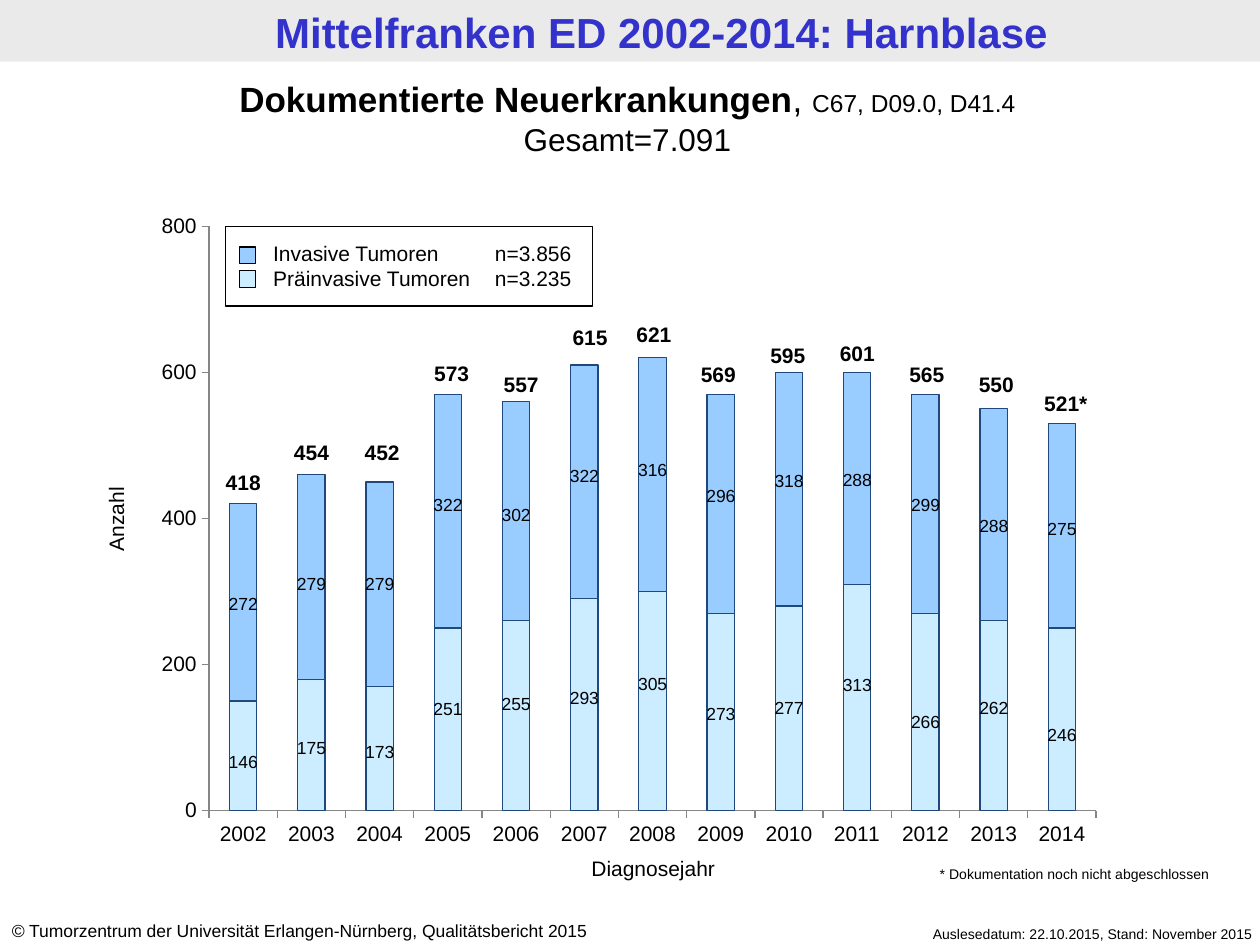
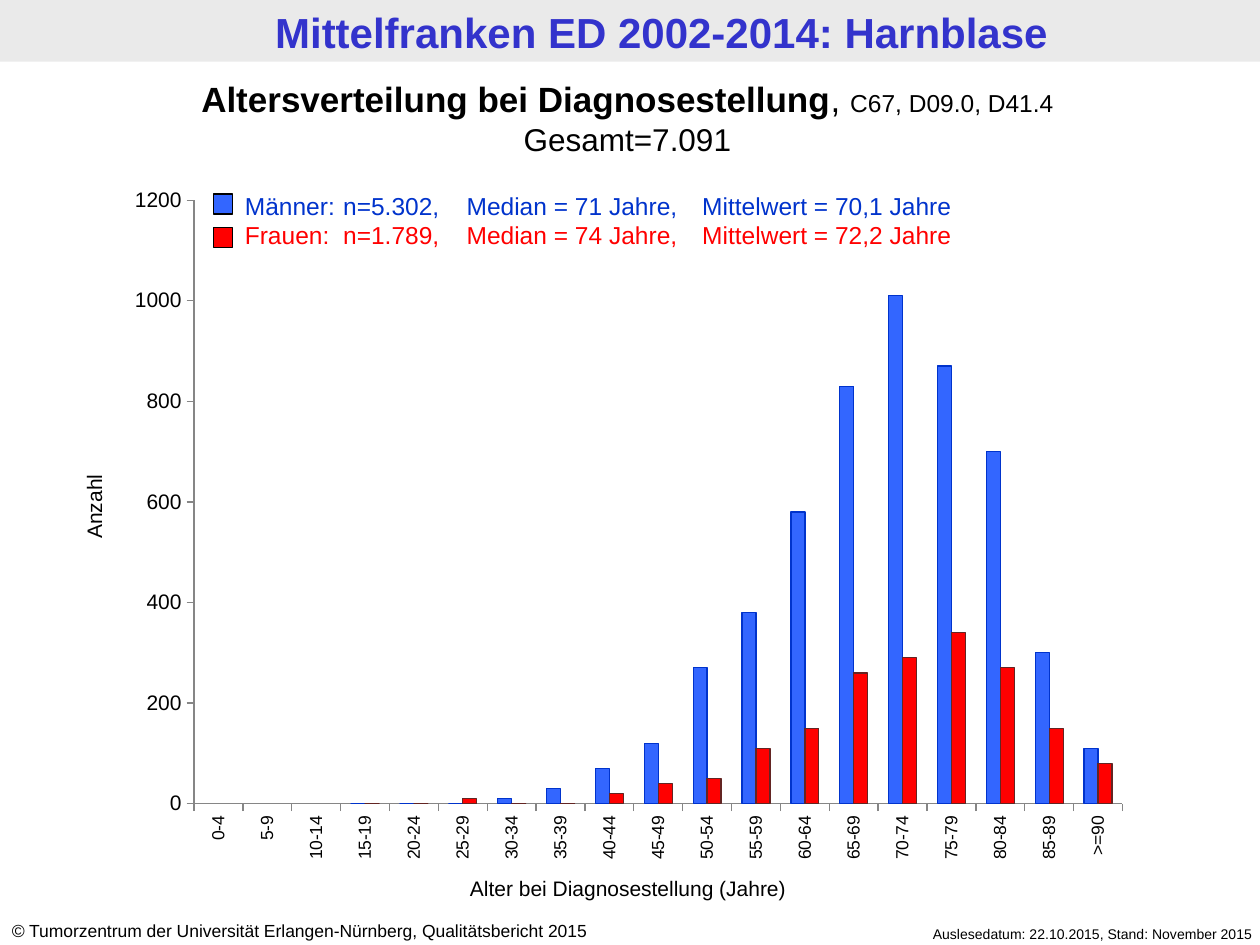
from dataclasses import dataclass
from typing import Optional

from pptx import Presentation
from pptx.chart.data import CategoryChartData
from pptx.dml.color import RGBColor
from pptx.enum.chart import XL_CHART_TYPE, XL_TICK_MARK
from pptx.enum.shapes import MSO_SHAPE
from pptx.enum.text import MSO_ANCHOR, MSO_AUTO_SIZE, PP_ALIGN
from pptx.oxml import parse_xml
from pptx.oxml.ns import nsdecls, qn
from pptx.util import Emu, Inches, Pt

LEFT, CENTER, RIGHT = PP_ALIGN.LEFT, PP_ALIGN.CENTER, PP_ALIGN.RIGHT
STACKED, CLUSTERED = XL_CHART_TYPE.COLUMN_STACKED, XL_CHART_TYPE.COLUMN_CLUSTERED
RECTANGLE = MSO_SHAPE.RECTANGLE
TICK_OUT = XL_TICK_MARK.OUTSIDE

# Grid: 100 columns by 75 rows of square cells
SLIDE_WIDTH, SLIDE_HEIGHT = Inches(10), Inches(7.5)
COLUMNS = 100
CELL = SLIDE_WIDTH / COLUMNS

FONT = "Arial"
BLACK, GREY, BAND, TITLE_BLUE = "000000", "868686", "EAEAEA", "3333CC"
INVASIVE, PREINVASIVE, BAR_EDGE = "99CCFF", "CCECFF", "1F497D"
MEN, MEN_EDGE, WOMEN, WOMEN_EDGE = "3366FF", "0033CC", "FF0000", "632523"


@dataclass(frozen=True)
class Area:
    """Position and size in grid cells."""
    left: float
    top: float
    width: float
    height: float

    def emu(self) -> tuple:
        return tuple(cells(v) for v in (self.left, self.top, self.width, self.height))


@dataclass(frozen=True)
class Span:
    text: str
    size: float
    bold: bool = False
    italic: bool = False


@dataclass(frozen=True)
class Style:
    size: float = 12
    color: str = BLACK
    bold: bool = False
    align: PP_ALIGN = LEFT
    tabs: tuple = ()


@dataclass(frozen=True)
class Series:
    name: str
    values: tuple
    fill: str
    edge: str


@dataclass(frozen=True)
class ColumnChart:
    kind: XL_CHART_TYPE
    area: Area
    plot: Area
    categories: tuple
    series: tuple
    maximum: int
    overlap: int
    category_size: float = 12
    upright_labels: bool = False


@dataclass(frozen=True)
class YearBar:
    """Counts of one year, the rows of their labels, and a shift of the total."""
    year: str
    invasive: int
    preinvasive: int
    total_row: float
    invasive_row: float
    preinvasive_row: float
    shift: float = 0
    mark: str = ""


def cells(count: float) -> Emu:
    return Emu(round(count * CELL))


def color(value: str) -> RGBColor:
    return RGBColor.from_string(value)


# Text
def write(frame, lines, style: Style) -> None:
    """Each line is a string or a tuple of spans."""
    for index, line in enumerate(lines):
        para = frame.paragraphs[0] if index == 0 else frame.add_paragraph()
        para.alignment = style.align
        if style.tabs:
            stops = "".join(f'<a:tab pos="{cells(t)}" algn="l"/>' for t in style.tabs)
            para._p.get_or_add_pPr().append(
                parse_xml(f'<a:tabLst {nsdecls("a")}>{stops}</a:tabLst>'))
        para.font.name = FONT
        para.font.color.rgb = color(style.color)
        if isinstance(line, str):
            para.font.size, para.font.bold = Pt(style.size), style.bold
            para.add_run().text = line
            continue
        for span in line:
            run = para.add_run()
            run.text = span.text
            run.font.size = Pt(span.size)
            run.font.bold, run.font.italic = span.bold, span.italic


def add_text(page, area: Area, lines, style: Style = Style(),
             rotation: float = 0, side_inset: float = 1):
    box = page.shapes.add_textbox(*area.emu())
    box.rotation = rotation
    frame = box.text_frame
    frame.word_wrap = True
    frame.margin_left = frame.margin_right = cells(side_inset)
    write(frame, lines, style)
    return box


def add_rectangle(page, area: Area, fill: Optional[str], edge: Optional[str] = BLACK) -> None:
    shape = page.shapes.add_shape(RECTANGLE, *area.emu())
    shape.shadow.inherit = False
    if fill:
        shape.fill.solid()
        shape.fill.fore_color.rgb = color(fill)
    else:
        shape.fill.background()
    if edge:
        shape.line.color.rgb = color(edge)
        shape.line.width = Pt(0.75)
    else:
        shape.line.fill.background()


def add_axis_title(page, area: Area, text: str, rotation: float = 0) -> None:
    add_text(page, area, [text], Style(align=CENTER), rotation)


# Parts shared by both slides
def add_page(deck, heading: str):
    page = deck.slides.add_slide(deck.slide_layouts.get_by_name("Title Only"))
    add_rectangle(page, Area(0, 0, COLUMNS, 4.9), BAND, None)
    band = add_text(page, Area(2.5, 0.15, 100, 4.9),
                    ["Mittelfranken ED 2002-2014: Harnblase"],
                    Style(24, TITLE_BLUE, True, CENTER))
    band.text_frame.margin_top = band.text_frame.margin_bottom = cells(0.4)
    add_text(page, Area(66.5, 72.95, 33.9, 2.4),
             ["Auslesedatum: 22.10.2015, Stand: November 2015"], Style(8, align=RIGHT))
    add_text(page, Area(-0.05, 72.55, 52.4, 2.7), [(
        Span("©", 10, italic=True),
        Span(" Tumorzentrum der Universität Erlangen-Nürnberg, Qualitätsbericht 2015", 10))])

    title = page.shapes.title
    title.left, title.top, title.width, title.height = Area(-0.4, 5.65, 100.4, 7.4).emu()
    frame = title.text_frame
    frame.auto_size = MSO_AUTO_SIZE.NONE
    frame.vertical_anchor = MSO_ANCHOR.TOP
    write(frame, [
        (Span(heading, 20, bold=True), Span(", ", 20), Span("C67, D09.0, D41.4", 14)),
        (Span("Gesamt=7.091", 18),)], Style(align=CENTER))
    return page


# Charts
def place_plot(chart, area: Area, plot: Area) -> None:
    shares = {"x": (plot.left - area.left) / area.width,
              "y": (plot.top - area.top) / area.height,
              "w": plot.width / area.width, "h": plot.height / area.height}
    modes = "".join(f'<c:{key}Mode val="edge"/>' for key in "xy")
    sizes = "".join(f'<c:{key} val="{share:.4f}"/>' for key, share in shares.items())
    plot_area = chart._chartSpace.chart.plotArea
    for old in plot_area.findall(qn("c:layout")):
        plot_area.remove(old)
    plot_area.insert(0, parse_xml(
        f'<c:layout {nsdecls("c")}><c:manualLayout><c:layoutTarget val="inner"/>'
        f'{modes}{sizes}</c:manualLayout></c:layout>'))


def add_column_chart(page, design: ColumnChart) -> None:
    data = CategoryChartData()
    data.categories = design.categories
    for series in design.series:
        data.add_series(series.name, series.values)
    chart = page.shapes.add_chart(design.kind, *design.area.emu(), data).chart
    chart.has_title = chart.has_legend = False
    chart.font.name, chart.font.size = FONT, Pt(12)
    chart.font.color.rgb = color(BLACK)
    place_plot(chart, design.area, design.plot)

    plot = chart.plots[0]
    plot.gap_width, plot.overlap, plot.vary_by_categories = 150, design.overlap, False
    for drawn, series in zip(plot.series, design.series):
        drawn.format.fill.solid()
        drawn.format.fill.fore_color.rgb = color(series.fill)
        drawn.format.line.color.rgb = color(series.edge)
        drawn.format.line.width = Pt(0.75)

    values, categories = chart.value_axis, chart.category_axis
    for axis, size in ((values, 12), (categories, design.category_size)):
        axis.has_major_gridlines = False
        axis.major_tick_mark = TICK_OUT
        axis.format.line.color.rgb = color(GREY)
        axis.tick_labels.font.size = Pt(size)
        axis.tick_labels.font.name = FONT
    values.minimum_scale, values.maximum_scale, values.major_unit = 0, design.maximum, 200
    if design.upright_labels:
        body = categories._element.find(qn("c:txPr")).find(qn("a:bodyPr"))
        body.set("rot", "-5400000")
        body.set("vert", "horz")


# Slide 1: new cases per year
YEAR_BARS = (
    YearBar("2002", 272, 146, 36.8, 46.6, 59.1),
    YearBar("2003", 279, 175, 34.4, 45, 58),
    YearBar("2004", 279, 173, 34.4, 45, 58.3, 0.2),
    YearBar("2005", 322, 251, 28.1, 38.7, 54.9, 0.3),
    YearBar("2006", 302, 255, 29, 39.5, 54.5, 0.4),
    YearBar("2007", 322, 293, 25.3, 36.4, 54, 0.45),
    YearBar("2008", 316, 305, 25, 35.9, 52.9, 0.1),
    YearBar("2009", 296, 273, 28.2, 38, 55.3, -0.2),
    YearBar("2010", 318, 277, 26.7, 36.8, 54.8, -0.1),
    YearBar("2011", 288, 313, 26.5, 36.7, 53),
    YearBar("2012", 299, 266, 28.2, 38.7, 55.9, 0.1),
    YearBar("2013", 288, 262, 29, 40.4, 54.8, 0.2),
    YearBar("2014", 275, 246, 30.5, 40.6, 57, 0.3, "*"),
)


def add_new_cases(deck) -> None:
    page = add_page(deck, "Dokumentierte Neuerkrankungen")
    plot = Area(16.6, 17.95, 70.4, 46.4)
    # Bars are drawn to the nearest ten; the labels hold the exact counts
    add_column_chart(page, ColumnChart(
        STACKED, Area(11.5, 16.4, 77.1, 51.4), plot,
        tuple(bar.year for bar in YEAR_BARS),
        (Series("Präinvasive Tumoren", tuple(round(bar.preinvasive, -1) for bar in YEAR_BARS),
                PREINVASIVE, BAR_EDGE),
         Series("Invasive Tumoren", tuple(round(bar.invasive, -1) for bar in YEAR_BARS),
                INVASIVE, BAR_EDGE)),
        maximum=800, overlap=100))
    add_axis_title(page, Area(40.6, 67.4, 22.5, 3), "Diagnosejahr")
    add_axis_title(page, Area(3.1, 39.7, 12.2, 3), "Anzahl", 270)

    # Legend
    add_rectangle(page, Area(17.9, 18, 29.1, 6.3), None)
    add_text(page, Area(20.7, 18.6, 26.4, 7.1),
             ["Invasive Tumoren\tn=3.856", "Präinvasive Tumoren\tn=3.235"],
             Style(tabs=(17.6,)))
    for row, fill in enumerate((INVASIVE, PREINVASIVE)):
        add_rectangle(page, Area(19, 19.6 + 1.9 * row, 1.3, 1.3), fill)

    # Labels of totals and parts
    slot = plot.width / len(YEAR_BARS)
    total_style, part_style = Style(12, bold=True, align=CENTER), Style(10, align=CENTER)
    for index, bar in enumerate(YEAR_BARS):
        middle = plot.left + slot * (index + 0.5)
        total = f"{bar.invasive + bar.preinvasive}{bar.mark}"
        add_text(page, Area(middle + bar.shift - 3.15, bar.total_row, 6.3, 3),
                 [total], total_style, side_inset=0)
        for count, row in ((bar.invasive, bar.invasive_row),
                           (bar.preinvasive, bar.preinvasive_row)):
            add_text(page, Area(middle - 2.15, row, 4.3, 2.7),
                     [str(count)], part_style, side_inset=0)
    add_text(page, Area(73.6, 68.2, 24.8, 2.4),
             ["* Dokumentation noch nicht abgeschlossen"], Style(8))


# Slide 2: age at diagnosis
def add_age_distribution(deck) -> None:
    page = add_page(deck, "Altersverteilung bei Diagnosestellung")
    ages = tuple(f"{age}-{age + 4}" for age in range(0, 90, 5)) + (">=90",)
    men = (None, None, None, 0, 0, 0, 10, 30, 70, 120, 270, 380, 580, 830,
           1010, 870, 700, 300, 110)
    women = (None, None, None, 0, 0, 10, 0, 0, 20, 40, 50, 110, 150, 260,
             290, 340, 270, 150, 80)
    add_column_chart(page, ColumnChart(
        CLUSTERED, Area(9.1, 13.9, 81.6, 55.5), Area(15.4, 15.9, 73.7, 47.9), ages,
        (Series("Männer", men, MEN, MEN_EDGE), Series("Frauen", women, WOMEN, WOMEN_EDGE)),
        maximum=1200, overlap=0, category_size=10, upright_labels=True))

    # Legend
    legend = add_text(page, Area(18.45, 14.65, 68.5, 5.7),
                      ["Männer:\tn=5.302,\tMedian = 71 Jahre,\tMittelwert = 70,1 Jahre",
                       "Frauen:\tn=1.789,\tMedian = 74 Jahre,\tMittelwert = 72,2 Jahre"],
                      Style(14, MEN_EDGE, tabs=(7.8, 17.6, 36.3)))
    legend.text_frame.paragraphs[1].font.color.rgb = color(WOMEN)
    for row, fill in enumerate((MEN, WOMEN)):
        add_rectangle(page, Area(16.95, 15.4 + 2.65 * row, 1.5, 1.6), fill)

    add_axis_title(page, Area(34.5, 69, 30.7, 3), "Alter bei Diagnosestellung (Jahre)")
    add_axis_title(page, Area(-5.6, 38.7, 26.1, 3), "Anzahl", 270)


def main() -> None:
    deck = Presentation()
    deck.slide_width, deck.slide_height = SLIDE_WIDTH, SLIDE_HEIGHT
    add_new_cases(deck)
    add_age_distribution(deck)
    deck.save("out.pptx")


if __name__ == "__main__":
    main()
